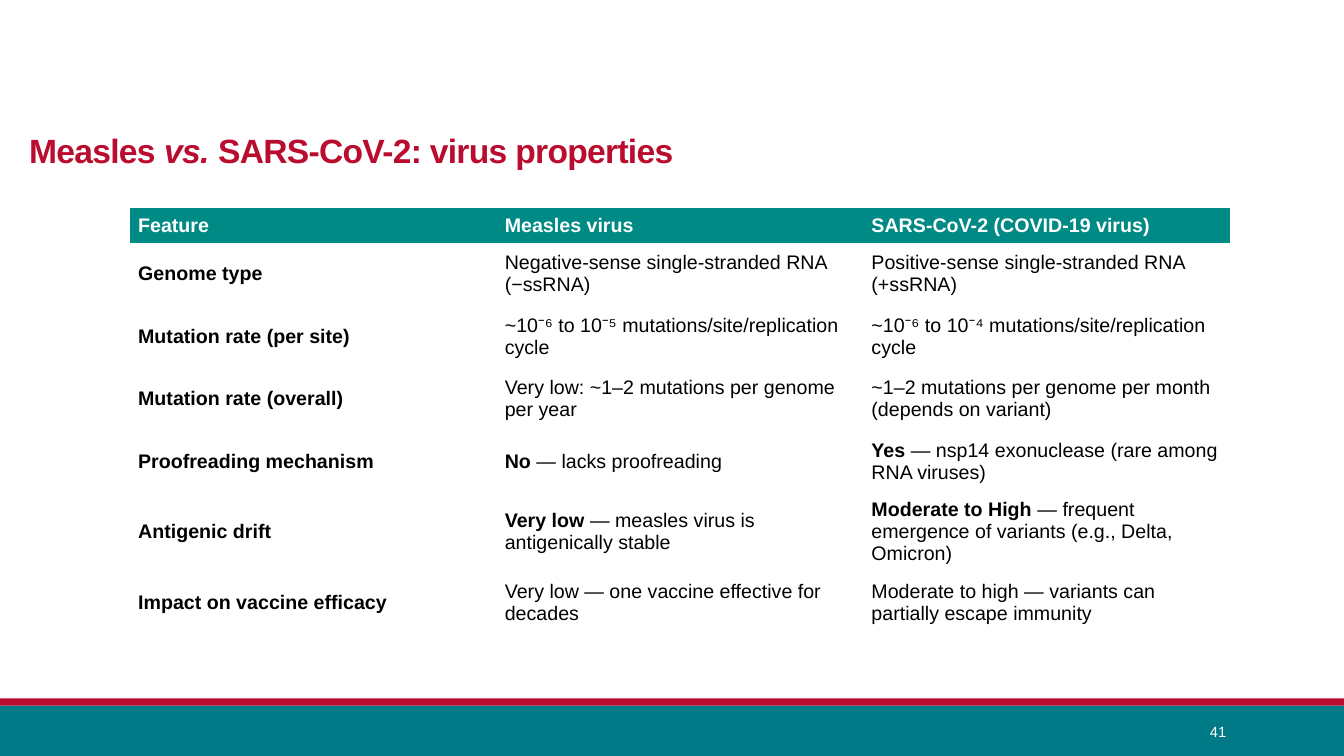
from pptx import Presentation
from pptx.dml.color import RGBColor
from pptx.enum.shapes import MSO_SHAPE as Shape
from pptx.enum.text import MSO_ANCHOR as Anchor, PP_ALIGN as Align
from pptx.util import Inches, Pt

RED, TEAL, HEAD, WHITE, BLACK = "BA0C2F", "007A86", "008A86", "FFFFFF", "000000"
PLAIN = "{2D5ABB26-0587-4C30-8999-92F81FD0307C}"
TITLE = [("Measles ", {}), ("vs. ", {"italic": True}), ("SARS-CoV-2: virus properties", {})]
PAGE = "41"
ROWS = [
    ("Feature", "Measles virus", "SARS-CoV-2 (COVID-19 virus)"),
    ("Genome type", "Negative-sense single-stranded RNA (−ssRNA)",
     "Positive-sense single-stranded RNA (+ssRNA)"),
    ("Mutation rate (per site)", "~10⁻⁶ to 10⁻⁵ mutations/site/replication cycle",
     "~10⁻⁶ to 10⁻⁴ mutations/site/replication cycle"),
    ("Mutation rate (overall)", "Very low: ~1–2 mutations per genome per year",
     "~1–2 mutations per genome per month (depends on variant)"),
    ("Proofreading mechanism", ("No", " — lacks proofreading"),
     ("Yes", " — nsp14 exonuclease (rare among RNA viruses)")),
    ("Antigenic drift", ("Very low", " — measles virus is antigenically stable"),
     ("Moderate to High", " — frequent emergence of variants (e.g., Delta, Omicron)")),
    ("Impact on vaccine efficacy", "Very low — one vaccine effective for decades",
     "Moderate to high — variants can partially escape immunity"),
]
BANDS = [(7, 0.5, TEAL), (6.93, 0.07, RED)]
WIDTH, HEIGHT = 13.33, 7.5
LEFT, TOP, SPAN = 1.29, 2.06, 10.91
HEAD_ROW, BODY_ROW = 0.35, 0.62


def color(code):
    return RGBColor.from_string(code)


def write(para, text, size=14, ink=BLACK, bold=False, italic=False, space=None):
    run = para.add_run()
    run.text = text
    font = run.font
    font.name, font.size = "Arial", Pt(size)
    font.bold, font.italic = bold, italic
    font.color.rgb = color(ink)
    if space is not None:
        run._r.get_or_add_rPr().set("spc", str(int(space * 100)))


def box(slide, *place, anchor):
    frame = slide.shapes.add_textbox(*map(Inches, place)).text_frame
    frame.word_wrap = True
    frame.vertical_anchor = anchor
    return frame.paragraphs[0]


def fill_cell(cell, value, row, col):
    cell.vertical_anchor = Anchor.MIDDLE
    cell.margin_left = cell.margin_right = Inches(0.08)
    cell.margin_top = cell.margin_bottom = Inches(0.04)
    if row == 0:
        cell.fill.solid()
        cell.fill.fore_color.rgb = color(HEAD)
    else:
        cell.fill.background()
    para = cell.text_frame.paragraphs[0]
    ink = WHITE if row == 0 else BLACK
    if isinstance(value, tuple):
        lead, rest = value
        write(para, lead, ink=ink, bold=True)
        write(para, rest, ink=ink)
    else:
        write(para, value, ink=ink, bold=row == 0 or col == 0)


def add_grid(slide):
    count = len(ROWS[0])
    tall = HEAD_ROW + BODY_ROW * (len(ROWS) - 1)
    table = slide.shapes.add_table(
        len(ROWS), count, *map(Inches, (LEFT, TOP, SPAN, tall))).table
    table._tbl.tblPr[0].text = PLAIN
    table.horz_banding = False
    for column in table.columns:
        column.width = Inches(SPAN / count)
    for row, values in enumerate(ROWS):
        table.rows[row].height = Inches(BODY_ROW if row else HEAD_ROW)
        for col, value in enumerate(values):
            fill_cell(table.cell(row, col), value, row, col)


def main():
    deck = Presentation()
    deck.slide_width, deck.slide_height = Inches(WIDTH), Inches(HEIGHT)
    slide = deck.slides.add_slide(deck.slide_layouts[6])
    for top, tall, code in BANDS:
        band = slide.shapes.add_shape(Shape.RECTANGLE, *map(Inches, (0, top, WIDTH, tall)))
        band.shadow.inherit = False
        band.fill.solid()
        band.fill.fore_color.rgb = color(code)
        band.line.fill.background()
    title = box(slide, 0.19, 0.15, 11, 1.59, anchor=Anchor.BOTTOM)
    title.line_spacing = 0.85
    for text, style in TITLE:
        write(title, text, size=24, ink=RED, bold=True, space=-0.5, **style)
    add_grid(slide)
    page = box(slide, 10.83, 7.06, 1.43, 0.4, anchor=Anchor.MIDDLE)
    page.alignment = Align.RIGHT
    write(page, PAGE, size=10.5, ink=WHITE)
    deck.save("out.pptx")


if __name__ == "__main__":
    main()
